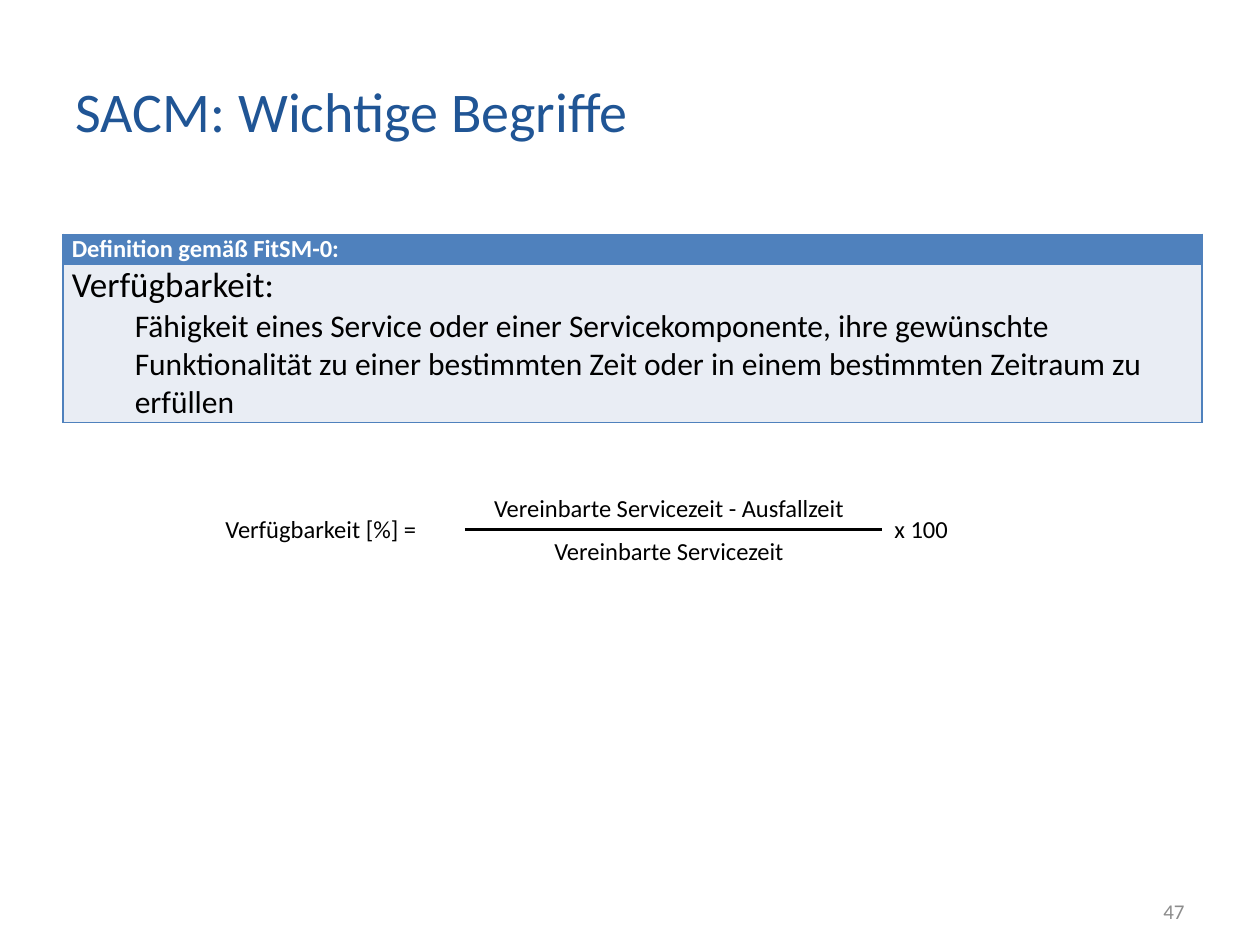
import pptx
import pptx.dml.color
import pptx.enum.shapes
import pptx.enum.text
import pptx.oxml
import pptx.oxml.ns
import pptx.util

ALIGN = pptx.enum.text.PP_ALIGN
ANCHOR = pptx.enum.text.MSO_ANCHOR
COLS, ROWS = 20, 15


def rgb(value):
    return pptx.dml.color.RGBColor.from_string(value)


class Deck:
    font = "Calibri"
    black, white, grey = "000000", "FFFFFF", "8C8C8C"
    title_blue, head_blue, body_blue = "205595", "4F81BD", "E9EDF4"

    def __init__(self):
        self.prs = pptx.Presentation()
        self.prs.slide_width = pptx.util.Inches(10)
        self.prs.slide_height = pptx.util.Inches(7.5)
        self.s = None

    def x(self, cols):
        return round(self.prs.slide_width * cols / COLS)

    def y(self, rows):
        return round(self.prs.slide_height * rows / ROWS)

    def box(self, left, top, width, height):
        return self.x(left), self.y(top), self.x(width), self.y(height)

    def style(self, p, size, color, bold=False, align=ALIGN.LEFT):
        p.alignment = align
        for r in p.runs:
            r.font.name = self.font
            r.font.size = pptx.util.Pt(size)
            r.font.bold = bold
            r.font.color.rgb = rgb(color)

    def title(self, text, left, top, width, height):
        self.s = self.prs.slides.add_slide(self.prs.slide_layouts[5])
        sp = self.s.shapes.title
        sp.left, sp.top, sp.width, sp.height = self.box(left, top, width, height)
        tf = sp.text_frame
        tf.text = text
        tf.vertical_anchor = ANCHOR.MIDDLE
        self.style(tf.paragraphs[0], 32, self.title_blue)

    def label(self, text, left, top, width, height, size=14, color=black,
              align=ALIGN.CENTER):
        sp = self.s.shapes.add_textbox(*self.box(left, top, width, height))
        tf = sp.text_frame
        tf.word_wrap = True
        tf.vertical_anchor = ANCHOR.MIDDLE
        tf.text = text
        self.style(tf.paragraphs[0], size, color, align=align)

    def rule(self, left, right, row):
        line = self.s.shapes.add_connector(
            pptx.enum.shapes.MSO_CONNECTOR.STRAIGHT,
            self.x(left), self.y(row), self.x(right), self.y(row))
        line.line.color.rgb = rgb(self.black)
        line.line.width = pptx.util.Pt(1.5)
        line._element.spPr.append(pptx.oxml.parse_xml(
            f'<a:effectLst {pptx.oxml.ns.nsdecls("a")}/>'))

    def cell(self, cell, text, fill):
        cell.margin_left = cell.margin_right = pptx.util.Inches(0.07)
        cell.margin_top = cell.margin_bottom = 0
        cell.text_frame.text = text
        for side in ("lnL", "lnR", "lnT", "lnB"):
            cell._tc.get_or_add_tcPr().append(pptx.oxml.parse_xml(
                f'<a:{side} {pptx.oxml.ns.nsdecls("a")} w="12700"><a:solidFill>'
                f'<a:srgbClr val="{self.head_blue}"/></a:solidFill></a:{side}>'))
        cell.fill.solid()
        cell.fill.fore_color.rgb = rgb(fill)
        return cell.text_frame.paragraphs

    def definition(self, heading, term, meaning, left, top, width, heights):
        table = self.s.shapes.add_table(
            2, 1, *self.box(left, top, width, sum(heights))).table
        for row, height in zip(table.rows, heights):
            row.height = self.y(height)
        head = self.cell(table.cell(0, 0), heading, self.head_blue)
        self.style(head[0], 14, self.white, bold=True)
        body = self.cell(table.cell(1, 0), f"{term}\n{meaning}", self.body_blue)
        body[1].level = 1
        pPr = body[1]._p.get_or_add_pPr()
        pPr.set("marL", str(pptx.util.Inches(0.5)))
        pPr.set("indent", "0")
        for p, size in zip(body, (20, 18)):
            self.style(p, size, self.black)


def main():
    deck = Deck()
    deck.title("SACM: Wichtige Begriffe", 1, 0.6, 15.44, 2.3)
    deck.definition(
        "Definition gemäß FitSM-0:",
        "Verfügbarkeit:",
        "Fähigkeit eines Service oder einer Servicekomponente, ihre gewünschte "
        "Funktionalität zu einer bestimmten Zeit oder in einem bestimmten "
        "Zeitraum zu erfüllen",
        1, 3.72, 18.08, (0.47, 2.5))
    row, height = 8.4, 0.68
    deck.label("Vereinbarte Servicezeit - Ausfallzeit", 7.38, row - height, 6.48, height)
    deck.label("Vereinbarte Servicezeit", 7.38, row, 6.48, height)
    deck.label("x 100", 14, row - height / 2, 1.6, height, align=ALIGN.LEFT)
    deck.rule(7.38, 14, row)
    deck.label("Verfügbarkeit [%] =", 3.38, row - height / 2, 3.6, height, align=ALIGN.LEFT)
    deck.label("47", 14.34, 14.06, 4.66, 0.8, size=12, color=deck.grey, align=ALIGN.RIGHT)
    deck.prs.save("out.pptx")


if __name__ == "__main__":
    main()
